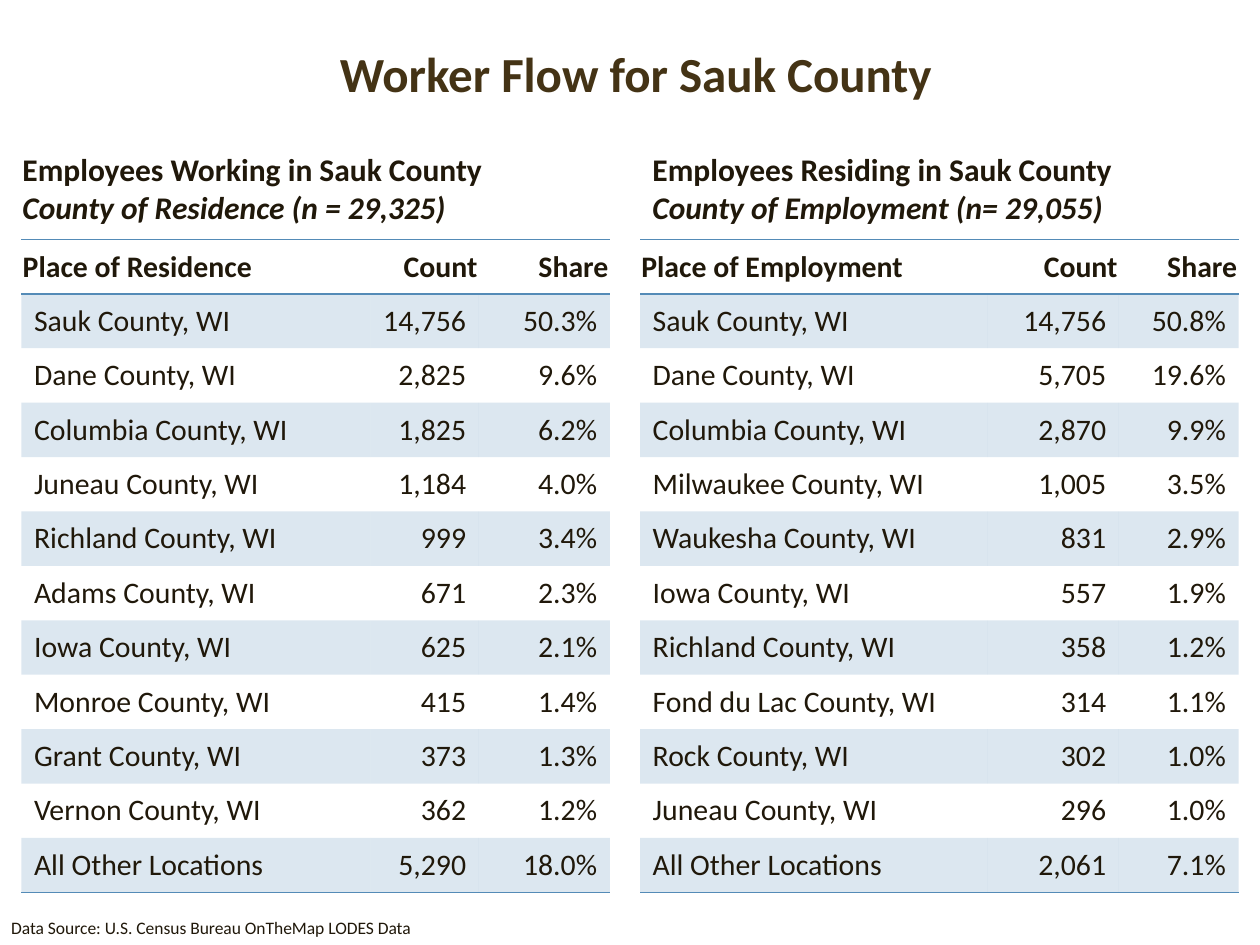
from dataclasses import dataclass

from lxml.etree import SubElement
from pptx import Presentation
from pptx.dml.color import RGBColor
from pptx.enum.text import MSO_ANCHOR, PP_ALIGN
from pptx.oxml import parse_xml
from pptx.oxml.ns import nsdecls, qn
from pptx.util import Inches, Pt

WIDTH, HEIGHT = 10, 7.5
FONT = "Calibri"
COLORS = {"title": "443315", "text": "20180A", "accent": "548BB7"}
NO_STYLE = "{2D5ABB26-0587-4C30-8999-92F81FD0307C}"
TABLE_TOP, ROW_HEIGHT = 1.9 / HEIGHT, 0.432 / HEIGHT
HEADING_TOP, HEADING_HEIGHT = 1.14 / HEIGHT, 0.71 / HEIGHT


@dataclass
class Line:
    text: str
    size: float
    color: str = "text"
    bold: bool = False
    italic: bool = False
    align: PP_ALIGN = PP_ALIGN.LEFT


@dataclass
class FlowPanel:
    """One heading with its table; horizontal lengths are shares of the slide width."""
    heading: str
    subheading: str
    heading_left: float
    heading_width: float
    table_left: float
    column_widths: tuple[float, ...]
    place_label: str
    flows: list[tuple[str, str, str]]


PANELS = [
    FlowPanel(
        "Employees Working in Sauk County", "County of Residence (n = 29,325)",
        0.008, 0.488, 0.017, (0.277, 0.086, 0.104), "Place of Residence",
        [
            ("Sauk County, WI", "14,756", "50.3%"),
            ("Dane County, WI", "2,825", "9.6%"),
            ("Columbia County, WI", "1,825", "6.2%"),
            ("Juneau County, WI", "1,184", "4.0%"),
            ("Richland County, WI", "999", "3.4%"),
            ("Adams County, WI", "671", "2.3%"),
            ("Iowa County, WI", "625", "2.1%"),
            ("Monroe County, WI", "415", "1.4%"),
            ("Grant County, WI", "373", "1.3%"),
            ("Vernon County, WI", "362", "1.2%"),
            ("All Other Locations", "5,290", "18.0%"),
        ],
    ),
    FlowPanel(
        "Employees Residing in Sauk County", "County of Employment (n= 29,055)",
        0.508, 0.492, 0.508, (0.276, 0.104, 0.095), "Place of Employment",
        [
            ("Sauk County, WI", "14,756", "50.8%"),
            ("Dane County, WI", "5,705", "19.6%"),
            ("Columbia County, WI", "2,870", "9.9%"),
            ("Milwaukee County, WI", "1,005", "3.5%"),
            ("Waukesha County, WI", "831", "2.9%"),
            ("Iowa County, WI", "557", "1.9%"),
            ("Richland County, WI", "358", "1.2%"),
            ("Fond du Lac County, WI", "314", "1.1%"),
            ("Rock County, WI", "302", "1.0%"),
            ("Juneau County, WI", "296", "1.0%"),
            ("All Other Locations", "2,061", "7.1%"),
        ],
    ),
]


def across(share: float) -> int:
    return Inches(share * WIDTH)


def down(share: float) -> int:
    return Inches(share * HEIGHT)


def write_lines(frame, lines: list[Line]) -> None:
    for index, line in enumerate(lines):
        paragraph = frame.add_paragraph() if index else frame.paragraphs[0]
        paragraph.alignment = line.align
        run = paragraph.add_run()
        run.text = line.text
        run.font.name = FONT
        run.font.size = Pt(line.size)
        run.font.bold = line.bold
        run.font.italic = line.italic
        run.font.color.rgb = RGBColor.from_string(COLORS[line.color])


def add_text(slide, left: float, top: float, width: float, height: float,
             lines: list[Line], anchor: MSO_ANCHOR = MSO_ANCHOR.TOP) -> None:
    box = slide.shapes.add_textbox(across(left), down(top), across(width), down(height))
    box.text_frame.word_wrap = True
    box.text_frame.vertical_anchor = anchor
    write_lines(box.text_frame, lines)


def tint_cell(cell) -> None:
    cell.fill.solid()
    cell.fill.fore_color.rgb = RGBColor.from_string(COLORS["accent"])
    color = cell._tc.tcPr.find(".//" + qn("a:srgbClr"))
    SubElement(color, qn("a:alpha")).set("val", "20000")


def add_rules(cell, sides: str) -> None:
    """Draw one-point rules; sides holds T and/or B, in that order."""
    properties = cell._tc.get_or_add_tcPr()
    for position, side in enumerate(sides):
        properties.insert(position, parse_xml(
            f'<a:ln{side} {nsdecls("a")} w="12700"><a:solidFill>'
            f'<a:srgbClr val="{COLORS["accent"]}"/></a:solidFill></a:ln{side}>'))


def add_flow_table(slide, panel: FlowPanel) -> None:
    rows = [(panel.place_label, "Count", "Share"), *panel.flows]
    frame = slide.shapes.add_table(
        len(rows), len(panel.column_widths), across(panel.table_left), down(TABLE_TOP),
        across(sum(panel.column_widths)), down(ROW_HEIGHT * len(rows)))
    table = frame.table
    table.first_row = table.horz_banding = False
    frame._element.find(".//" + qn("a:tableStyleId")).text = NO_STYLE
    for column, width in zip(table.columns, panel.column_widths):
        column.width = across(width)
    for row_index, values in enumerate(rows):
        table.rows[row_index].height = down(ROW_HEIGHT)
        is_header = row_index == 0
        for column_index, value in enumerate(values):
            cell = table.cell(row_index, column_index)
            cell.vertical_anchor = MSO_ANCHOR.MIDDLE
            align = PP_ALIGN.RIGHT if column_index else PP_ALIGN.LEFT
            write_lines(cell.text_frame, [Line(value, 17, bold=is_header, align=align)])
            if row_index % 2:
                tint_cell(cell)
            else:
                cell.fill.background()
            if is_header:
                cell.margin_left = cell.margin_right = cell.margin_top = Inches(0.01)
                cell.margin_bottom = 0
                add_rules(cell, "TB")
            elif row_index == len(rows) - 1:
                add_rules(cell, "B")


def main() -> None:
    presentation = Presentation()
    presentation.slide_width, presentation.slide_height = Inches(WIDTH), Inches(HEIGHT)
    slide = presentation.slides.add_slide(presentation.slide_layouts[6])

    # Title
    add_text(slide, 0.05, 0.016, 0.909, 0.123,
             [Line("Worker Flow for Sauk County", 28, "title", True, align=PP_ALIGN.CENTER)],
             MSO_ANCHOR.MIDDLE)

    # Worker flow panels
    for panel in PANELS:
        add_flow_table(slide, panel)
        add_text(slide, panel.heading_left, HEADING_TOP, panel.heading_width, HEADING_HEIGHT,
                 [Line(panel.heading, 18, bold=True),
                  Line(panel.subheading, 18, bold=True, italic=True)])

    # Data source
    add_text(slide, -0.001, 0.964, 0.511, 0.036,
             [Line("Data Source: U.S. Census Bureau OnTheMap LODES Data", 10)])

    presentation.save("out.pptx")


if __name__ == "__main__":
    main()
